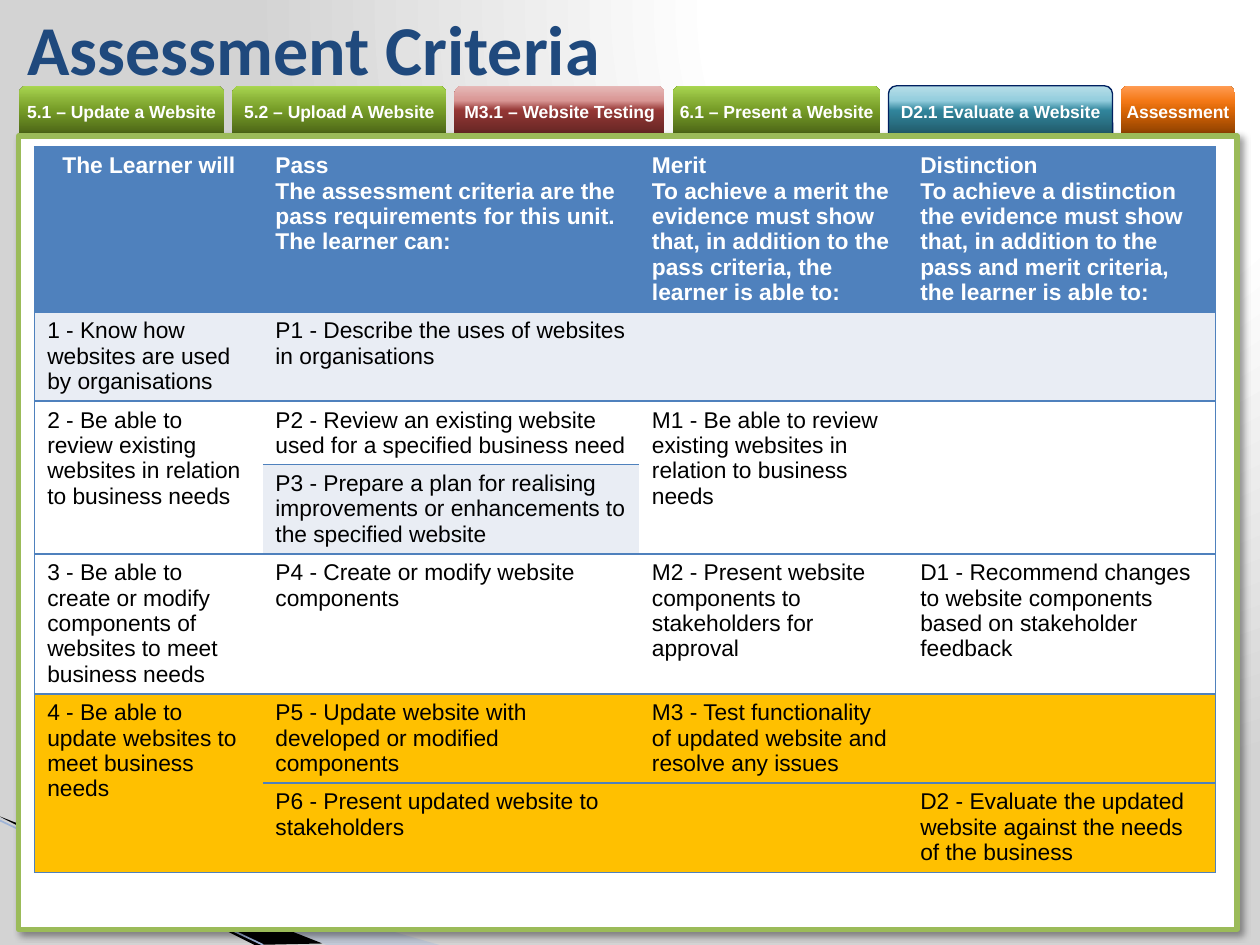
from lxml.etree import SubElement
from pptx import Presentation
from pptx.dml.color import RGBColor
from pptx.enum.shapes import MSO_CONNECTOR, MSO_SHAPE
from pptx.enum.text import MSO_ANCHOR, MSO_AUTO_SIZE, PP_ALIGN
from pptx.oxml import parse_xml
from pptx.oxml.ns import nsdecls, qn
from pptx.util import Cm, Pt

COLORS = {
    "white": "FFFFFF", "black": "000000", "title": "1F497D", "panel": "9BBB59",
    "header": "4F81BD", "band": "E9EDF4", "current": "FFC000", "navy": "002060",
    "wedge": "A7B9DB", "edge": "9EB3D6", "grey": "D3D3D3",
}
GRADIENT_POSITIONS = (0, 50, 70, 100)
GRADIENTS = {
    "green": ("4A6316", "769C27", "89B137", "A9D651"),
    "red": ("632523", "953735", "D99694", "E6B9B8"),
    "blue": ("215968", "31859C", "93CDDD", "B7DEE8"),
    "orange": ("8B3F00", "DA6606", "F47917", "FF9C54"),
}
UPWARD = '<a:lin ang="16200000" scaled="0"/>'
RADIAL = '<a:path path="circle"><a:fillToRect l="65000" b="98000"/></a:path>'
NO_STYLE = "{2D5ABB26-0587-4C30-8999-92F81FD0307C}"

# label, gradient, width in cm
TABS = [
    ("5.1 – Update a Website", "green", 4.14),
    ("5.2 – Upload A Website", "green", 4.32),
    ("M3.1 – Website Testing", "red", 4.24),
    ("6.1 – Present a Website", "green", 4.19),
    ("D2.1 Evaluate a Website", "blue", 4.52),
    ("Assessment", "orange", 2.31),
]
COLUMN_WIDTHS = (4.6, 7.59, 5.41, 6.2)
# height in cm, fill, cell texts
CRITERIA = [
    (3.3, "header", (
        "The Learner will",
        "Pass\nThe assessment criteria are the pass requirements for this unit. "
        "The learner can:",
        "Merit\nTo achieve a merit the\nevidence must show that, in addition to the "
        "pass criteria, the learner is able to:",
        "Distinction\nTo achieve a distinction the evidence must show that, in "
        "addition to the pass and merit criteria, the learner is able to:")),
    (1.8, "band", (
        "1 - Know how websites are used by organisations",
        "P1 - Describe the uses of websites in organisations", "", "")),
    (1.27, "white", (
        "2 - Be able to review existing websites in relation to business needs",
        "P2 - Review an existing website used for a specified business need",
        "M1 - Be able to review existing websites in relation to business needs", "")),
    (1.8, "band", (
        "",
        "P3 - Prepare a plan for realising improvements or enhancements to the "
        "specified website", "", "")),
    (2.82, "white", (
        "3 - Be able to create or modify components of websites to meet business needs",
        "P4 - Create or modify website components",
        "M2 - Present website components to stakeholders for approval",
        "D1 - Recommend changes to website components based on stakeholder feedback")),
    (1.8, "current", (
        "4 - Be able to update websites to meet business needs",
        "P5 - Update website with developed or modified components",
        "M3 - Test functionality of updated website and resolve any issues", "")),
    (1.8, "current", (
        "", "P6 - Present updated website to stakeholders", "",
        "D2 - Evaluate the updated website against the needs of the business")),
]
TALL_CELLS = [(2, 0), (2, 2), (2, 3), (5, 0)]


def rgb(name):
    return RGBColor.from_string(COLORS[name])


def set_all(target, values):
    for name, value in values.items():
        setattr(target, name, value)


def gradient_xml(stops, direction):
    stop_xml = "".join(
        f'<a:gs pos="{position * 1000}"><a:srgbClr val="{color}"/></a:gs>'
        for position, color in stops)
    return parse_xml(f'<a:gradFill {nsdecls("a")} rotWithShape="1">'
                     f"<a:gsLst>{stop_xml}</a:gsLst>{direction}</a:gradFill>")


def put_gradient(fill, parent, stops, direction):
    fill.gradient()
    parent.replace(parent.find(qn("a:gradFill")), gradient_xml(stops, direction))


class SlideBuilder:
    heading = {"name": "Calibri", "size": Pt(40), "bold": True}
    tab_font = {"name": "Arial", "size": Pt(10), "bold": True}
    cell_font = {"name": "Arial", "size": Pt(13)}

    def __init__(self, slide):
        self.slide = slide

    def background(self):
        stops = ((0, COLORS["white"]), (40, COLORS["white"]), (100, COLORS["grey"]))
        fill = self.slide.background.fill
        fill.solid()
        properties = next(self.slide.element.iter(qn("p:bgPr")))
        put_gradient(fill, properties, stops, RADIAL)

    def put_text(self, frame, text, font, color, align=PP_ALIGN.LEFT):
        frame.text = text
        for paragraph in frame.paragraphs:
            paragraph.alignment = align
            set_all(paragraph.font, font)
            paragraph.font.color.rgb = rgb(color)

    def title(self, text):
        shape = self.slide.shapes.title
        set_all(shape, {"left": Cm(0.3), "top": Cm(0),
                        "width": Cm(21.41), "height": Cm(1.93)})
        set_all(shape.text_frame, {"vertical_anchor": MSO_ANCHOR.MIDDLE,
                                   "auto_size": MSO_AUTO_SIZE.NONE})
        self.put_text(shape.text_frame, text, self.heading, "title")

    def wedge(self, points, color, opacity=100):
        (x, y), *rest = [(Cm(x), Cm(y)) for x, y in points]
        builder = self.slide.shapes.build_freeform(x, y)
        builder.add_line_segments(rest)
        shape = builder.convert_to_shape()
        shape.shadow.inherit = False
        shape.line.fill.background()
        shape.fill.solid()
        shape.fill.fore_color.rgb = rgb(color)
        color_node = next(shape._element.spPr.iter(qn("a:srgbClr")))
        SubElement(color_node, qn("a:alpha"), val=str(opacity * 1000))

    def line(self, x1, y1, x2, y2, color, width):
        connector = self.slide.shapes.add_connector(
            MSO_CONNECTOR.STRAIGHT, Cm(x1), Cm(y1), Cm(x2), Cm(y2))
        connector.line.color.rgb = rgb(color)
        connector.line.width = Pt(width)
        SubElement(connector._element.spPr, qn("a:effectLst"))

    def tab(self, label, gradient, left, width):
        shape = self.slide.shapes.add_shape(
            MSO_SHAPE.ROUND_2_SAME_RECTANGLE, Cm(left), Cm(1.73), Cm(width), Cm(0.99))
        shape.shadow.inherit = False
        put_gradient(shape.fill, shape._element.spPr,
                     zip(GRADIENT_POSITIONS, GRADIENTS[gradient]), UPWARD)
        if gradient == "blue":
            shape.line.color.rgb = rgb("navy")
            shape.line.width = Pt(0.75)
        else:
            shape.line.fill.background()
        margins = ("margin_left", "margin_top", "margin_right", "margin_bottom")
        set_all(shape.text_frame, dict.fromkeys(margins, 0))
        set_all(shape.text_frame, {"vertical_anchor": MSO_ANCHOR.MIDDLE,
                                   "word_wrap": True})
        self.put_text(shape.text_frame, label, self.tab_font, "white", PP_ALIGN.CENTER)

    def panel(self):
        shape = self.slide.shapes.add_shape(
            MSO_SHAPE.RECTANGLE, Cm(0.38), Cm(2.74), Cm(24.56), Cm(16))
        shape.fill.solid()
        shape.fill.fore_color.rgb = rgb("white")
        shape.line.color.rgb = rgb("panel")
        shape.line.width = Pt(3)
        shape._element.spPr.append(parse_xml(
            f'<a:effectLst {nsdecls("a")}><a:outerShdw blurRad="{Pt(4)}" '
            f'dist="{Pt(3)}" dir="2700000" algn="tl" rotWithShape="0">'
            f'<a:srgbClr val="{COLORS["black"]}"><a:alpha val="40000"/></a:srgbClr>'
            "</a:outerShdw></a:effectLst>"))

    def borders(self, cell, sides):
        properties = cell._tc.get_or_add_tcPr()
        for index, side in enumerate(sides):
            properties.insert(index, parse_xml(
                f'<a:ln{side} {nsdecls("a")} w="{Pt(1)}"><a:solidFill>'
                f'<a:srgbClr val="{COLORS["header"]}"/></a:solidFill></a:ln{side}>'))

    def table(self, rows, widths, tall_cells):
        heights = [height for height, _, _ in rows]
        frame = self.slide.shapes.add_table(
            len(rows), len(widths), Cm(0.7), Cm(2.96), Cm(sum(widths)), Cm(sum(heights)))
        table = frame.table
        table._tbl.tblPr.find(qn("a:tableStyleId")).text = NO_STYLE
        table.horz_banding = False
        for column, width in zip(table.columns, widths):
            column.width = Cm(width)
        for row, column in tall_cells:
            table.cell(row, column).merge(table.cell(row + 1, column))
        for r, (height, fill, texts) in enumerate(rows):
            table.rows[r].height = Cm(height)
            for c, text in enumerate(texts):
                cell = table.cell(r, c)
                if cell.is_spanned:
                    continue
                is_header = r == 0
                self.put_text(cell.text_frame, text, {**self.cell_font, "bold": is_header},
                              "white" if is_header else "black",
                              PP_ALIGN.CENTER if is_header and c == 0 else PP_ALIGN.LEFT)
                cell.fill.solid()
                cell.fill.fore_color.rgb = rgb(fill)
                outer = {0: "L", len(widths) - 1: "R"}.get(c, "")
                self.borders(cell, outer + "TB")


def main():
    presentation = Presentation()
    set_all(presentation, {"slide_width": Cm(25.4), "slide_height": Cm(19.05)})
    builder = SlideBuilder(presentation.slides.add_slide(presentation.slide_layouts[5]))
    builder.background()
    builder.title("Assessment Criteria")
    builder.wedge([(0, 16.5), (8.86, 19.05), (6.58, 19.05), (0, 16.48)], "wedge", 40)
    builder.wedge([(0, 16.46), (6.5, 19.02), (5.13, 19.05), (0.03, 16.48)], "black")
    builder.line(0, 16.54, 5.31, 19.05, "edge", 0.95)
    left = 0.38
    for label, gradient, width in TABS:
        builder.tab(label, gradient, left, width)
        left += width + 0.16
    builder.panel()
    builder.table(CRITERIA, COLUMN_WIDTHS, TALL_CELLS)
    presentation.save("out.pptx")


if __name__ == "__main__":
    main()
